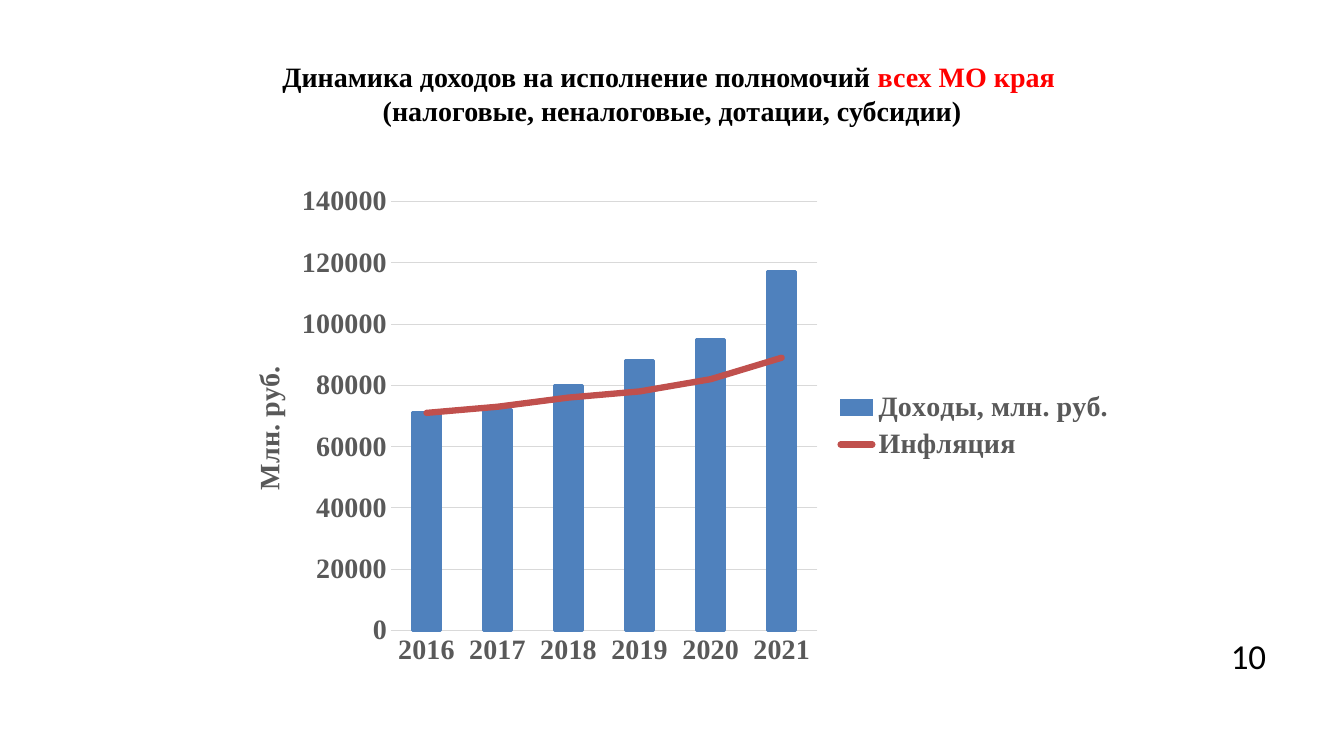
from dataclasses import dataclass

from lxml.etree import SubElement
from pptx import Presentation
from pptx.chart.chart import Chart
from pptx.chart.data import CategoryChartData
from pptx.dml.color import RGBColor
from pptx.enum.chart import XL_CHART_TYPE, XL_LEGEND_POSITION, XL_TICK_MARK
from pptx.enum.text import MSO_ANCHOR, PP_ALIGN
from pptx.oxml import parse_xml
from pptx.oxml.ns import nsdecls, qn
from pptx.slide import Slide
from pptx.text.text import Font
from pptx.util import Cm, Pt

BLACK = RGBColor(0x00, 0x00, 0x00)
RED = RGBColor(0xFF, 0x00, 0x00)
GREY = RGBColor(0x59, 0x59, 0x59)
GRID_GREY = RGBColor(0xD9, 0xD9, 0xD9)
BAR_BLUE = RGBColor(0x4F, 0x81, 0xBD)
LINE_RED = RGBColor(0xC0, 0x50, 0x4D)
SERIF = "Times New Roman"
YEARS = ["2016", "2017", "2018", "2019", "2020", "2021"]


@dataclass(frozen=True)
class Box:
    left: float
    top: float
    width: float
    height: float

    def lengths(self) -> tuple[Cm, Cm, Cm, Cm]:
        return Cm(self.left), Cm(self.top), Cm(self.width), Cm(self.height)


@dataclass(frozen=True)
class Indicator:
    name: str
    values: tuple[int, ...]
    color: RGBColor
    line_width: float


INCOME = Indicator("Доходы, млн. руб.", (71000, 72000, 80000, 88000, 95000, 117000), BAR_BLUE, 2.25)
INFLATION = Indicator("Инфляция", (71000, 73000, 76000, 78000, 82000, 89000), LINE_RED, 4.5)
INDICATORS = (INCOME, INFLATION)


def style_font(font: Font, color: RGBColor = GREY, size: float = 20,
               name: str = SERIF, bold: bool = True) -> None:
    font.name, font.size, font.bold = name, Pt(size), bold
    font.color.rgb = color


def add_text(slide: Slide, box: Box, lines: list[list[tuple[str, RGBColor]]], *,
             align: PP_ALIGN, size: float = 20, name: str = SERIF, bold: bool = True) -> None:
    """Add one paragraph whose lines are lists of coloured runs."""
    frame = slide.shapes.add_textbox(*box.lengths()).text_frame
    frame.word_wrap = True
    frame.vertical_anchor = MSO_ANCHOR.MIDDLE
    paragraph = frame.paragraphs[0]
    paragraph.alignment = align
    for index, line in enumerate(lines):
        if index:
            paragraph.add_line_break()
        for text, color in line:
            run = paragraph.add_run()
            run.text = text
            style_font(run.font, color, size, name, bold)


def layout_xml(target: str, **fractions: float) -> str:
    parts = "".join(f'<c:{side}Mode val="edge"/>' for side in "xy")
    parts += "".join(f'<c:{key} val="{value}"/>' for key, value in fractions.items())
    return f'<c:layout {nsdecls("c")}><c:manualLayout>{target}{parts}</c:manualLayout></c:layout>'


def set_layout(parent, position: int, target: str = "", **fractions: float) -> None:
    for old in parent.findall(qn("c:layout")):
        parent.remove(old)
    parent.insert(position, parse_xml(layout_xml(target, **fractions)))


def move_inflation_to_line(chart: Chart) -> None:
    """Turn the second column series into a line on the same axes."""
    bars = chart.plots[0]._element
    series = bars.findall(qn("c:ser"))[1]
    for bar_only in series.findall(qn("c:invertIfNegative")):
        series.remove(bar_only)
    line_plot = parse_xml(f'<c:lineChart {nsdecls("c")}><c:grouping val="standard"/>'
                          '<c:varyColors val="0"/></c:lineChart>')
    line_plot.append(series)
    SubElement(line_plot, qn("c:marker")).set("val", "1")
    for axis_id in bars.findall(qn("c:axId")):
        SubElement(line_plot, qn("c:axId")).set("val", axis_id.get("val"))
    bars.addnext(line_plot)
    marker = parse_xml(f'<c:marker {nsdecls("c")}><c:symbol val="none"/></c:marker>')
    series.find(qn("c:tx")).addnext(marker)
    chart.plots[1].series[0].smooth = False


def style_axes(chart: Chart) -> None:
    years, amounts = chart.category_axis, chart.value_axis
    for axis in (years, amounts):
        axis.major_tick_mark = axis.minor_tick_mark = XL_TICK_MARK.NONE
        style_font(axis.tick_labels.font)
    amounts.minimum_scale, amounts.maximum_scale, amounts.major_unit = 0, 140000, 20000
    amounts.tick_labels.number_format = "General"
    amounts.tick_labels.number_format_is_linked = False
    amounts.format.line.fill.background()
    for line in (years.format.line, amounts.major_gridlines.format.line):
        line.color.rgb, line.width = GRID_GREY, Pt(0.75)
    caption_frame = amounts.axis_title.text_frame
    caption = caption_frame.paragraphs[0].add_run()
    caption.text = "Млн. руб."
    style_font(caption.font)
    caption_body = caption_frame._txBody.find(qn("a:bodyPr"))
    caption_body.set("rot", "-5400000")
    caption_body.set("vert", "horz")
    set_layout(amounts.axis_title._element, 1, x=0.03, y=0.37)


def add_income_chart(slide: Slide, box: Box) -> None:
    data = CategoryChartData()
    data.categories = YEARS
    for indicator in INDICATORS:
        data.add_series(indicator.name, indicator.values)
    chart = slide.shapes.add_chart(XL_CHART_TYPE.COLUMN_CLUSTERED, *box.lengths(), data).chart
    style_font(chart.font, BLACK, 10, "Calibri", False)
    chart.has_title = False
    chart.has_legend = True
    chart.legend.position = XL_LEGEND_POSITION.RIGHT
    chart.legend.include_in_layout = False
    style_font(chart.legend.font)
    chart.plots[0].gap_width = 150
    chart.plots[0].vary_by_categories = False
    move_inflation_to_line(chart)
    for plot, indicator in zip(chart.plots, INDICATORS):
        shown = plot.series[0].format
        shown.line.color.rgb, shown.line.width = indicator.color, Pt(indicator.line_width)
        outline = plot.series[0]._element.find(".//" + qn("a:ln"))
        outline.set("cap", "rnd")
        SubElement(outline, qn("a:round"))
    income_fill = chart.plots[0].series[0].format.fill
    income_fill.solid()
    income_fill.fore_color.rgb = INCOME.color
    style_axes(chart)
    plot_area = chart.plots[0]._element.getparent()
    set_layout(plot_area, 0, '<c:layoutTarget val="inner"/>', x=0.19, y=0.05, w=0.47, h=0.86)


def main() -> None:
    presentation = Presentation()
    presentation.slide_width, presentation.slide_height = Cm(33.87), Cm(19.05)
    slide = presentation.slides.add_slide(presentation.slide_layouts[6])
    heading = [
        [("Динамика доходов на исполнение полномочий ", BLACK), ("всех МО края ", RED)],
        [("(налоговые, неналоговые, дотации, субсидии)", BLACK)],
    ]
    add_text(slide, Box(1.7, 0.76, 30.48, 3.18), heading, align=PP_ALIGN.CENTER)
    add_text(slide, Box(30.71, 16, 1.45, 1.02), [[("10", BLACK)]],
             align=PP_ALIGN.RIGHT, size=25, name="Calibri", bold=False)
    add_income_chart(slide, Box(5.51, 4.45, 22.86, 12.57))
    presentation.save("out.pptx")


if __name__ == "__main__":
    main()
